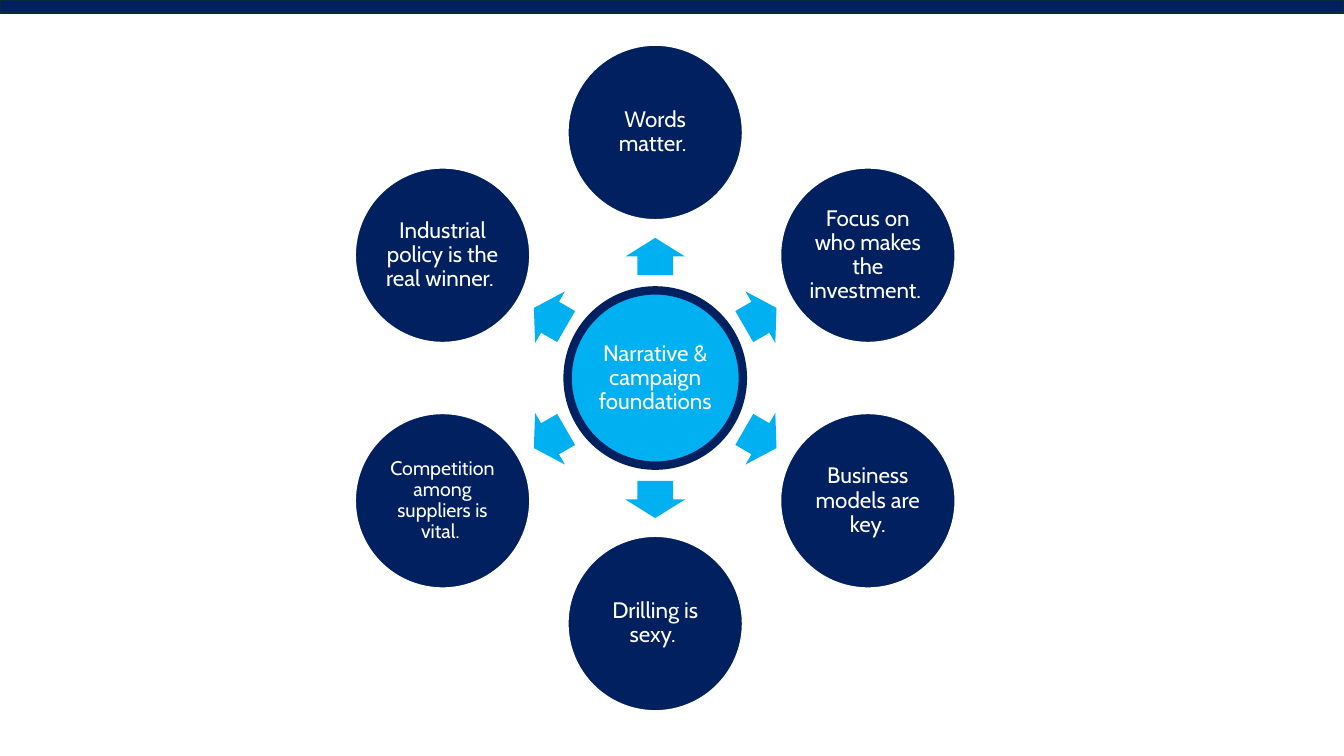
import math

import pptx
import pptx.dml.color
import pptx.enum.shapes
import pptx.enum.text
import pptx.util

Pt = pptx.util.Pt
RGBColor = pptx.dml.color.RGBColor
MSO_SHAPE = pptx.enum.shapes.MSO_SHAPE

NAVY = RGBColor(0x00, 0x20, 0x60)
SKY = RGBColor(0x00, 0xB0, 0xF0)
BAR_EDGE = RGBColor(0x09, 0x2A, 0x39)
WHITE = RGBColor(0xFF, 0xFF, 0xFF)

SLIDE_WIDTH, SLIDE_HEIGHT = 960, 540
DIAMETER = 125.2
ARROW_LENGTH, ARROW_WIDTH = 26.6, 42.6
ARROW_DISTANCE = 86.8

CENTER_TEXT = "Narrative & campaign foundations"
FOUNDATIONS = [
    ("Words matter. ", 16),
    ("Focus on who makes the investment. ", 16),
    ("Business models are key.", 16),
    ("Drilling is sexy. ", 16),
    ("Competition among suppliers is vital. ", 14),
    ("Industrial policy is the real winner. ", 16),
]


def add_filled_shape(slide, kind, box, fill, line=None, line_width=0):
    shape = slide.shapes.add_shape(kind, *(Pt(length) for length in box))
    shape.shadow.inherit = False
    shape.fill.solid()
    shape.fill.fore_color.rgb = fill
    if line is None:
        shape.line.fill.background()
    else:
        shape.line.color.rgb = line
        shape.line.width = Pt(line_width)
    return shape


def add_circle(slide, center_x, center_y, text, size, fill, line, line_width):
    box = (center_x - DIAMETER / 2, center_y - DIAMETER / 2, DIAMETER, DIAMETER)
    circle = add_filled_shape(slide, MSO_SHAPE.OVAL, box, fill, line, line_width)
    frame = circle.text_frame
    frame.word_wrap = True
    frame.vertical_anchor = pptx.enum.text.MSO_ANCHOR.MIDDLE
    frame.margin_left = frame.margin_right = Pt(1.5)
    frame.margin_top = frame.margin_bottom = Pt(1.5)
    paragraph = frame.paragraphs[0]
    paragraph.alignment = pptx.enum.text.PP_ALIGN.CENTER
    paragraph.line_spacing = 0.9
    run = paragraph.add_run()
    run.text = text
    run.font.name = "Cabin"
    run.font.size = Pt(size)
    run.font.color.rgb = WHITE


def add_arrow(slide, center_x, center_y, angle):
    box = (center_x - ARROW_LENGTH / 2, center_y - ARROW_WIDTH / 2,
           ARROW_LENGTH, ARROW_WIDTH)
    arrow = add_filled_shape(slide, MSO_SHAPE.RIGHT_ARROW, box, SKY)
    arrow.adjustments[0] = 0.6
    arrow.adjustments[1] = 0.5
    arrow.rotation = angle % 360


def add_radial_diagram(slide, left, top, width, height):
    center_x, center_y = left + width / 2, top + height / 2
    circle_distance = (height - DIAMETER) / 2
    add_circle(slide, center_x, center_y, CENTER_TEXT, 16, SKY, NAVY, 6)
    for index, (text, size) in enumerate(FOUNDATIONS):
        angle = index * 360 / len(FOUNDATIONS) - 90
        across = math.cos(math.radians(angle))
        down = math.sin(math.radians(angle))
        add_arrow(slide, center_x + ARROW_DISTANCE * across,
                  center_y + ARROW_DISTANCE * down, angle)
        add_circle(slide, center_x + circle_distance * across,
                   center_y + circle_distance * down, text, size, NAVY, WHITE, 1.5)


def add_top_bar(slide, left, top, width, height):
    add_filled_shape(slide, MSO_SHAPE.RECTANGLE, (left, top, width, height),
                     NAVY, BAR_EDGE, 1.5)


def main():
    presentation = pptx.Presentation()
    presentation.slide_width = Pt(SLIDE_WIDTH)
    presentation.slide_height = Pt(SLIDE_HEIGHT)
    slide = presentation.slides.add_slide(presentation.slide_layouts[6])
    add_radial_diagram(slide, 253.4, 32, 429.2, 476)
    add_top_bar(slide, 0, 0, SLIDE_WIDTH, 9)
    presentation.save("out.pptx")


if __name__ == "__main__":
    main()
